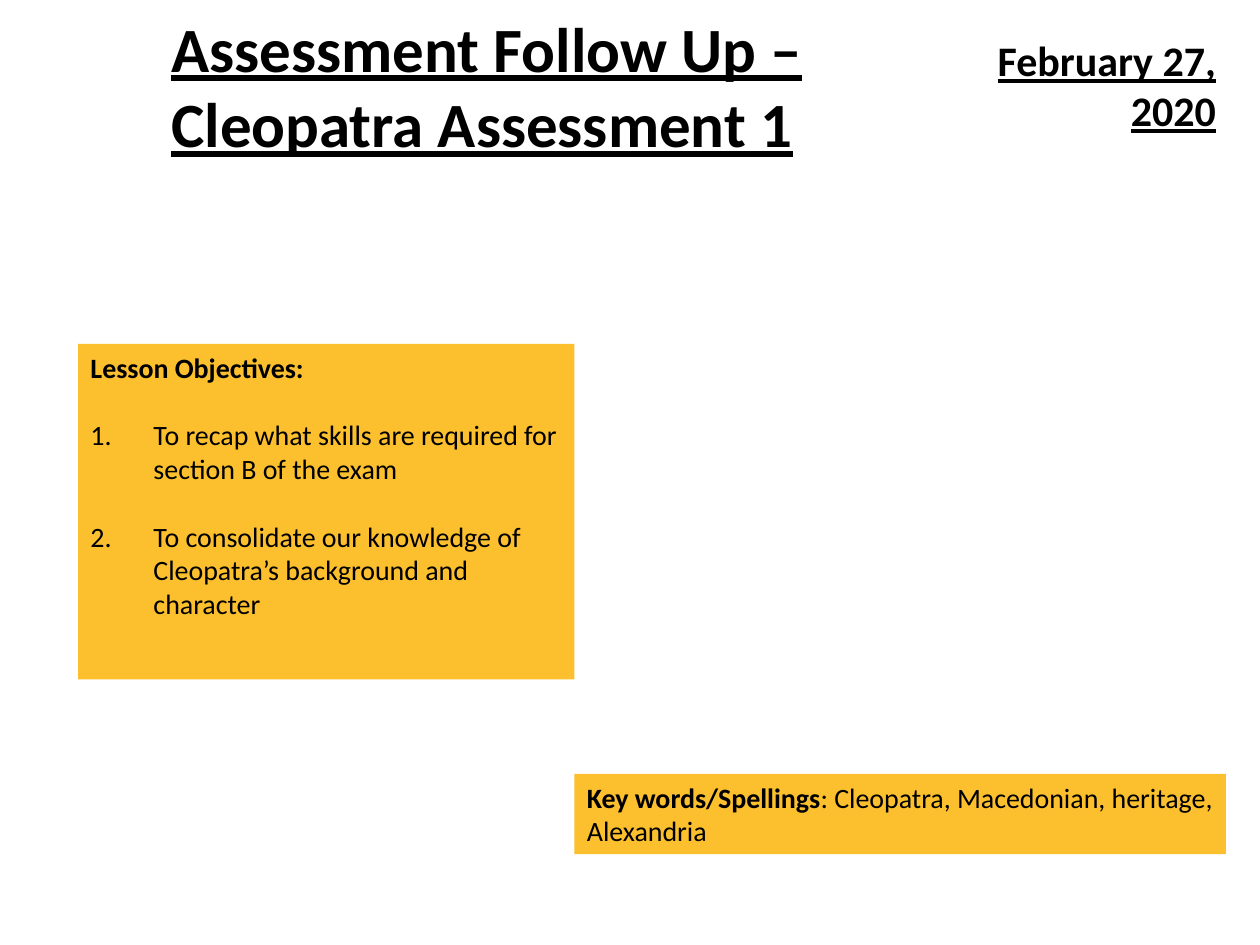
from lxml.etree import SubElement
from pptx import Presentation
from pptx.dml.color import RGBColor
from pptx.enum.shapes import MSO_SHAPE as Preset
from pptx.enum.text import MSO_ANCHOR as Anchor, MSO_AUTO_SIZE as AutoSize, PP_ALIGN as Align
from pptx.oxml.ns import qn
from pptx.util import Inches, Pt

WIDTH, HEIGHT = 10, 7.5
AMBER, BLACK = "FCC02E", "000000"
BODY_SIZE = 16
BLANK_LINE = 19.5  # points, one line of body text
NUMBER_INDENT = 0.5

HEADING = dict(bold=True, underline=True)
TITLE = "Assessment Follow Up – Cleopatra Assessment 1"
DATE = "February 27, 2020"
OBJECTIVES_LABEL = "Lesson Objectives:"
OBJECTIVES = [
    "To recap what skills are required for section B of the exam",
    "To consolidate our knowledge of Cleopatra’s background and character",
]
KEYWORDS_LABEL = "Key words/Spellings"
KEYWORDS = ": Cleopatra, Macedonian, heritage, Alexandria"

# left, top, width, height as shares of the slide
AREAS = {
    "title": (0.126, 0.003, 0.69, 0.175),
    "date": (0.715, 0.03, 0.26, 0.12),
    "objectives": (0.062, 0.364, 0.394, 0.355),
    "keywords": (0.456, 0.819, 0.517, 0.085),
}


def color(hex_code):
    return RGBColor.from_string(hex_code)


def area(part):
    left, top, width, height = AREAS[part]
    return [Inches(share * side) for share, side in
            ((left, WIDTH), (top, HEIGHT), (width, WIDTH), (height, HEIGHT))]


def prepare(frame):
    """Wrap the text from the top left and return the first paragraph."""
    settings = dict(word_wrap=True, auto_size=AutoSize.NONE, vertical_anchor=Anchor.TOP)
    for name, value in settings.items():
        setattr(frame, name, value)
    frame.paragraphs[0].alignment = Align.LEFT
    return frame.paragraphs[0]


def write(paragraph, text, size=BODY_SIZE, **formats):
    run = paragraph.add_run()
    run.text = text
    run.font.color.rgb = color(BLACK)
    for name, value in dict(name="Calibri", size=Pt(size), **formats).items():
        setattr(run.font, name, value)


def add_panel(slide, part):
    panel = slide.shapes.add_shape(Preset.RECTANGLE, *area(part))
    panel.shadow.inherit = False
    panel.fill.solid()
    panel.fill.fore_color.rgb = color(AMBER)
    panel.line.fill.background()
    return panel.text_frame


def number(paragraph):
    properties = paragraph._p.get_or_add_pPr()
    indent = Inches(NUMBER_INDENT)
    properties.set("marL", str(indent))
    properties.set("indent", str(-indent))
    SubElement(properties, qn("a:buFont"), typeface="+mj-lt")
    SubElement(properties, qn("a:buAutoNum"), type="arabicPeriod")


def main():
    deck = Presentation()
    deck.slide_width, deck.slide_height = Inches(WIDTH), Inches(HEIGHT)
    slide = deck.slides.add_slide(deck.slide_layouts[5])

    title = slide.shapes.title
    title.left, title.top, title.width, title.height = area("title")
    write(prepare(title.text_frame), TITLE, 36, **HEADING)

    date = prepare(slide.shapes.add_textbox(*area("date")).text_frame)
    date.alignment = Align.RIGHT
    write(date, DATE, 24, **HEADING)

    objectives = add_panel(slide, "objectives")
    write(prepare(objectives), OBJECTIVES_LABEL, bold=True)
    for objective in OBJECTIVES:
        item = objectives.add_paragraph()
        item.alignment = Align.LEFT
        item.space_before = Pt(BLANK_LINE)
        number(item)
        write(item, objective)

    keywords = prepare(add_panel(slide, "keywords"))
    write(keywords, KEYWORDS_LABEL, bold=True)
    write(keywords, KEYWORDS)

    deck.save("out.pptx")


if __name__ == "__main__":
    main()
